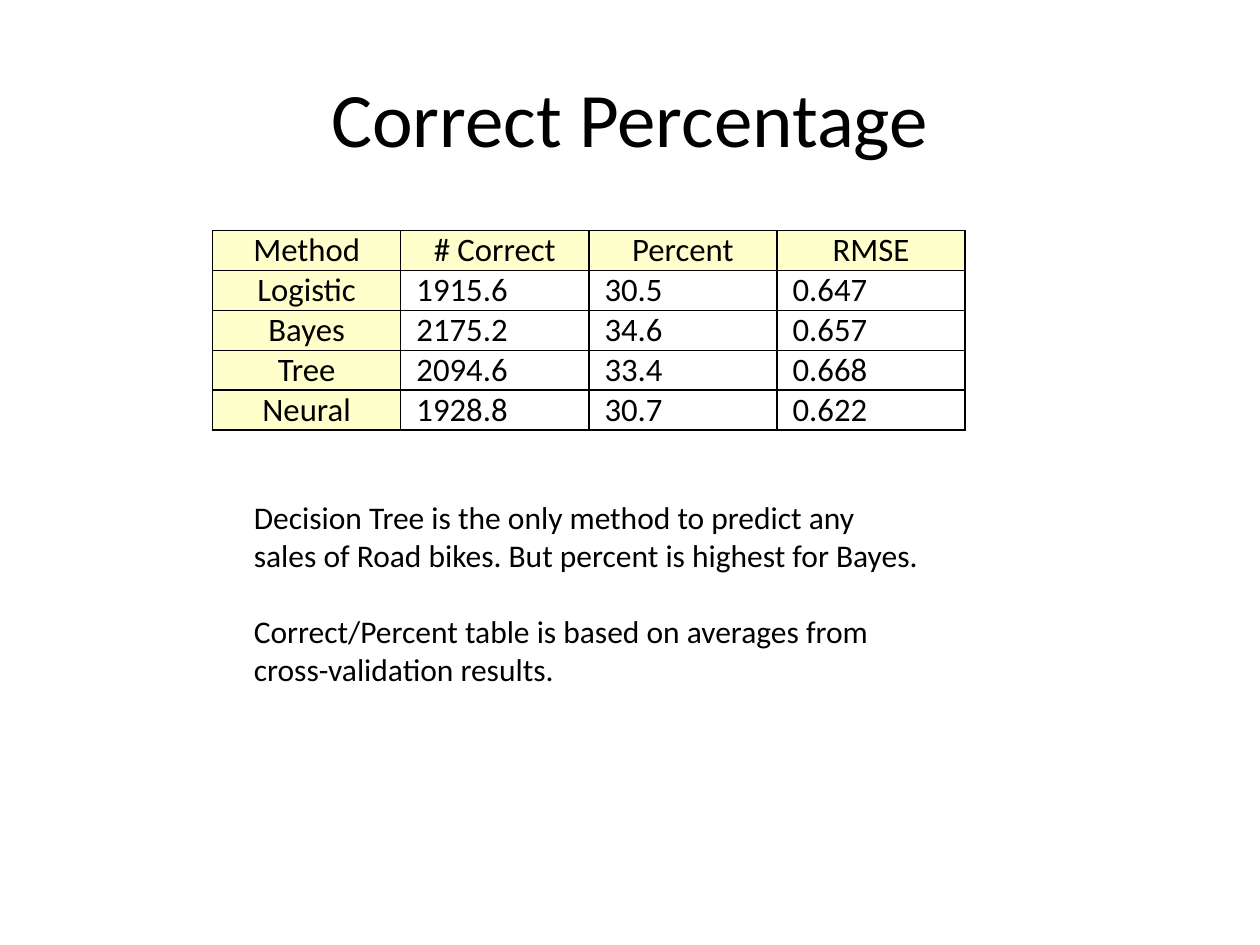
from pptx import Presentation
from pptx.dml.color import RGBColor
from pptx.enum import text
from pptx.oxml.ns import qn
from pptx.util import Pt
from lxml import etree

COLORS = {"ink": "000000", "header": "FFFFCC"}
FONT = "Calibri"
RESULTS = [
    ["Method", "# Correct", "Percent", "RMSE"],
    ["Logistic", "1915.6", "30.5", "0.647"],
    ["Bayes", "2175.2", "34.6", "0.657"],
    ["Tree", "2094.6", "33.4", "0.668"],
    ["Neural", "1928.8", "30.7", "0.622"],
]
COMMENTS = [
    "Decision Tree is the only method to predict any sales of Road bikes. "
    "But percent is highest for Bayes.",
    "Correct/Percent table is based on averages from cross-validation results.",
]


def add_run(paragraph, wording, size):
    run = paragraph.add_run()
    run.text = wording
    run.font.name = FONT
    run.font.size = Pt(size)
    run.font.color.rgb = RGBColor.from_string(COLORS["ink"])


def set_title(slide, wording):
    title = slide.shapes.title
    title.left, title.top, title.width, title.height = Pt(36), Pt(21.6), Pt(648), Pt(90)
    title.text_frame.vertical_anchor = text.MSO_ANCHOR.MIDDLE
    heading = title.text_frame.paragraphs[0]
    heading.alignment = text.PP_ALIGN.CENTER
    add_run(heading, wording, 44)


def add_borders(cell):
    """Draw a thin line on all four sides; borders must precede the fill in tcPr."""
    properties = cell._tc.get_or_add_tcPr()
    for position, side in enumerate(("a:lnL", "a:lnR", "a:lnT", "a:lnB")):
        line = etree.Element(qn(side), w=str(Pt(1)))
        fill = etree.SubElement(line, qn("a:solidFill"))
        etree.SubElement(fill, qn("a:srgbClr"), val=COLORS["ink"])
        properties.insert(position, line)


def fill_cell(cell, wording, is_header):
    cell.margin_left = cell.margin_right = Pt(9)
    cell.margin_top = cell.margin_bottom = Pt(0)
    entry = cell.text_frame.paragraphs[0]
    add_run(entry, wording, 18.7)
    if is_header:
        entry.alignment = text.PP_ALIGN.CENTER
        cell.fill.solid()
        cell.fill.fore_color.rgb = RGBColor.from_string(COLORS["header"])
    else:
        cell.fill.background()
    add_borders(cell)


def add_results_table(slide, results):
    column_width, row_height = 107.5, 22.8
    row_count, column_count = len(results), len(results[0])
    table = slide.shapes.add_table(
        row_count, column_count, Pt(121.5), Pt(131.8),
        Pt(column_width * column_count), Pt(row_height * row_count)).table
    table.horz_banding = False
    for column in table.columns:
        column.width = Pt(column_width)
    for r, method in enumerate(results):
        table.rows[r].height = Pt(row_height)
        for c, value in enumerate(method):
            fill_cell(table.cell(r, c), value, r == 0 or c == 0)


def add_comments(slide, comments):
    frame = slide.shapes.add_textbox(Pt(138), Pt(281), Pt(396), Pt(116.5)).text_frame
    frame.word_wrap = True
    frame.auto_size = text.MSO_AUTO_SIZE.SHAPE_TO_FIT_TEXT
    for index, comment in enumerate(comments):
        paragraph = frame.add_paragraph() if index else frame.paragraphs[0]
        paragraph.space_before = Pt(22 if index else 0)
        add_run(paragraph, comment, 18)


def main():
    deck = Presentation()
    deck.slide_width, deck.slide_height = Pt(720), Pt(540)
    slide = deck.slides.add_slide(deck.slide_layouts[5])
    set_title(slide, "Correct Percentage")
    add_comments(slide, COMMENTS)
    add_results_table(slide, RESULTS)
    deck.save("out.pptx")


if __name__ == "__main__":
    main()
